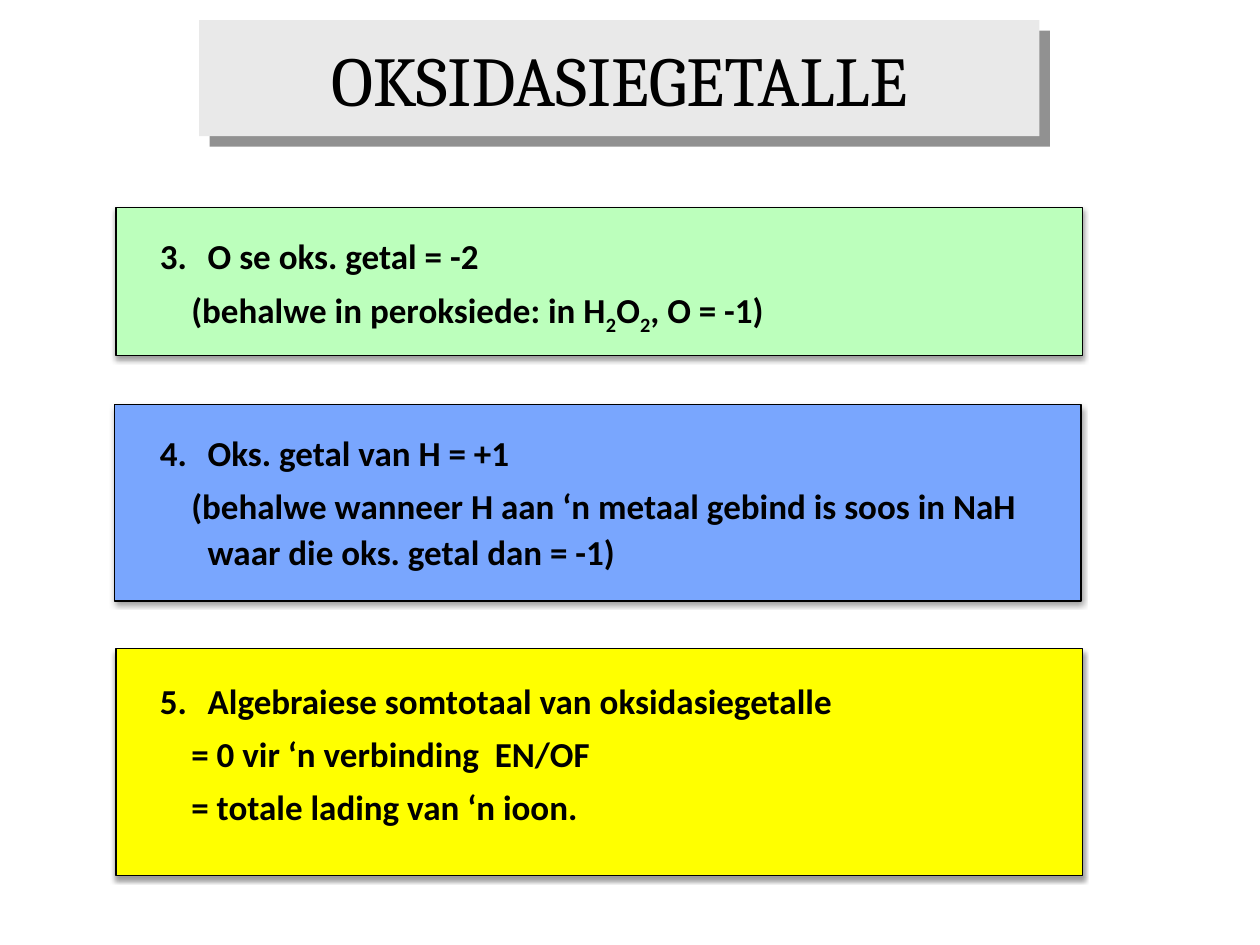
import pptx
import pptx.dml.color
import pptx.enum.shapes
import pptx.enum.text
import pptx.oxml
import pptx.oxml.ns
import pptx.util

Inches = pptx.util.Inches
Pt = pptx.util.Pt
RGBColor = pptx.dml.color.RGBColor
RECTANGLE = pptx.enum.shapes.MSO_SHAPE.RECTANGLE

BLACK = RGBColor(0x00, 0x00, 0x00)
TITLE_GREY = RGBColor(0xE9, 0xE9, 0xE9)
GREEN = RGBColor(0xBC, 0xFF, 0xBC)
BLUE = RGBColor(0x79, 0xA6, 0xFE)
YELLOW = RGBColor(0xFF, 0xFF, 0x00)

# Content: an underscore marks the next character as a subscript
TITLE = "OKSIDASIEGETALLE"
RULES = [
    {"color": GREEN, "panel": (0.92, 1.65, 7.67, 1.17), "text": (1.17, 1.78, 7.11, 0.94),
     "lines": ["3.\tO se oks. getal = -2",
               "(behalwe in peroksiede: in H_2O_2, O = -1)"]},
    {"color": BLUE, "panel": (0.91, 3.21, 7.67, 1.56), "text": (1.17, 3.34, 7.11, 1.35),
     "lines": ["4.\tOks. getal van H = +1",
               "(behalwe wanneer H aan ‘n metaal gebind is soos in NaH "
               "waar die oks. getal dan = -1)"]},
    {"color": YELLOW, "panel": (0.92, 5.15, 7.67, 1.8), "text": (1.17, 5.31, 6.25, 1.56),
     "lines": ["5.\tAlgebraiese somtotaal van oksidasiegetalle",
               "= 0 vir ‘n verbinding  EN/OF",
               "= totale lading van ‘n ioon."]},
]
HANGING = 0.38
NUMBER_INDENT = -0.38
DETAIL_INDENT = -0.13


def add_panel(shapes, box, fill):
    shape = shapes.add_shape(RECTANGLE, *map(Inches, box))
    shape.fill.solid()
    shape.fill.fore_color.rgb = fill
    shape.line.fill.background()
    return shape


def add_shadow(shape, color, opacity, blur, distance, angle):
    shape.shadow.inherit = False
    effects = shape._element.spPr.find(pptx.oxml.ns.qn("a:effectLst"))
    effects.append(pptx.oxml.parse_xml(
        f'<a:outerShdw {pptx.oxml.ns.nsdecls("a")} blurRad="{Pt(blur)}" '
        f'dist="{Pt(distance)}" dir="{angle * 60000}" algn="ctr" rotWithShape="0">'
        f'<a:srgbClr val="{color}"><a:alpha val="{opacity * 1000}"/></a:srgbClr>'
        '</a:outerShdw>'))


def style_font(paragraph, name, size, bold):
    paragraph.font.name = name
    paragraph.font.size = Pt(size)
    paragraph.font.bold = bold
    paragraph.font.color.rgb = BLACK


def add_runs(paragraph, line):
    first, *rest = line.split("_")
    paragraph.add_run().text = first
    for part in rest:
        subscript = paragraph.add_run()
        subscript.text = part[0]
        subscript.font._element.set("baseline", "-25000")
        paragraph.add_run().text = part[1:]


def add_rule(slide, rule):
    group = slide.shapes.add_group_shape()
    panel = add_panel(group.shapes, rule["panel"], rule["color"])
    panel.line.color.rgb = BLACK
    panel.line.width = Pt(0.75)
    add_shadow(panel, BLACK, 38, 3.1, 1.6, 90)

    frame = group.shapes.add_textbox(*map(Inches, rule["text"])).text_frame
    frame.word_wrap = True
    for index, line in enumerate(rule["lines"]):
        paragraph = frame.add_paragraph() if index else frame.paragraphs[0]
        style_font(paragraph, "Calibri", 20, True)
        paragraph.line_spacing = 1.1
        paragraph.space_before = Pt(4)
        properties = paragraph._p.get_or_add_pPr()
        properties.set("marL", str(Inches(HANGING)))
        properties.set("indent", str(Inches(DETAIL_INDENT if index else NUMBER_INDENT)))
        add_runs(paragraph, line)


presentation = pptx.Presentation()
presentation.slide_width = Inches(10)
presentation.slide_height = Inches(7.5)
slide = presentation.slides.add_slide(presentation.slide_layouts[6])

# Title banner
banner = add_panel(slide.shapes, (1.58, 0.16, 6.67, 0.92), TITLE_GREY)
add_shadow(banner, RGBColor(0x91, 0x91, 0x91), 100, 0, 8.5, 45)
banner.text_frame.vertical_anchor = pptx.enum.text.MSO_ANCHOR.MIDDLE
heading = banner.text_frame.paragraphs[0]
heading.text = TITLE
heading.alignment = pptx.enum.text.PP_ALIGN.CENTER
style_font(heading, "Cambria", 40, False)

# Numbered rules
for rule in RULES:
    add_rule(slide, rule)

presentation.save("out.pptx")
